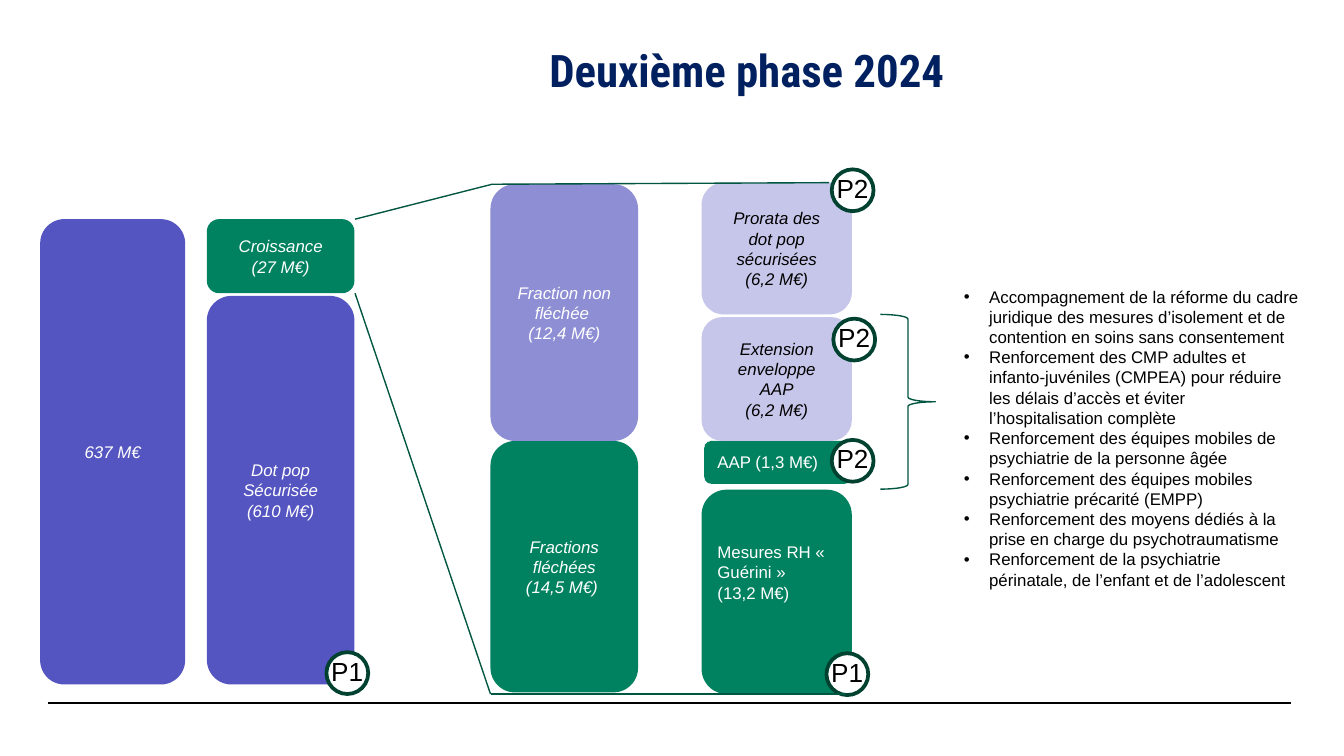
import pptx
import pptx.util
import pptx.dml.color
import pptx.enum.shapes
import pptx.enum.text
import pptx.oxml.ns
import lxml.etree

Cm, Pt = pptx.util.Cm, pptx.util.Pt
KIND = pptx.enum.shapes.MSO_SHAPE
ALIGN = pptx.enum.text.PP_ALIGN
ANCHOR = pptx.enum.text.MSO_ANCHOR
FIT = pptx.enum.text.MSO_AUTO_SIZE
qn = pptx.oxml.ns.qn
HEX = {"navy": "002060", "green": "008260", "dark": "004130", "line": "005640",
       "blue": "5555C1", "mid": "8E8ED5", "pale": "C6C6EA",
       "white": "FFFFFF", "black": "000000"}


def rgb(name):
    return pptx.dml.color.RGBColor.from_string(HEX[name])


def write(frame, lines, size, color, align=ALIGN.LEFT, italic=False, bold=False,
          face="Arial", bullet=False):
    """Put one paragraph per line into the frame."""
    frame.word_wrap = True
    for i, line in enumerate(lines):
        para = frame.paragraphs[0] if i == 0 else frame.add_paragraph()
        if bullet:
            props = para._p.get_or_add_pPr()
            props.set("marL", str(Cm(0.48)))
            props.set("indent", str(-Cm(0.48)))
            lxml.etree.SubElement(props, qn("a:buChar")).set("char", "•")
        para.alignment = align
        para.space_before = Pt(0)
        run = para.add_run()
        run.text = line
        font = run.font
        font.name, font.size, font.bold, font.italic = face, Pt(size), bold, italic
        font.color.rgb = rgb(color)


deck = pptx.Presentation()
deck.slide_width, deck.slide_height = Cm(25.4), Cm(14.28)
slide = deck.slides.add_slide(deck.slide_layouts[1])
shapes = slide.shapes

# Title and list
title, body = shapes.title, slide.placeholders[1]
for holder, place in ((title, (3.51, 0.46, 21.21, 2.21)),
                      (body, (17.96, 5.28, 6.93, 6.02))):
    holder.left, holder.top, holder.width, holder.height = map(Cm, place)
    holder.text_frame.auto_size = FIT.NONE
    holder.text_frame.vertical_anchor = ANCHOR.TOP

frame = title.text_frame
frame.margin_top = frame.margin_bottom = Cm(0.25)
write(frame, ["Deuxième phase 2024"], 24, "navy", ALIGN.CENTER, bold=True,
      face="Roboto Condensed")
frame.paragraphs[0].line_spacing = 1.1

write(body.text_frame, [
    "Accompagnement de la réforme du cadre juridique des mesures d’isolement "
    "et de contention en soins sans consentement",
    "Renforcement des CMP adultes et infanto-juvéniles (CMPEA) pour réduire "
    "les délais d’accès et éviter l’hospitalisation complète",
    "Renforcement des équipes mobiles de psychiatrie de la personne âgée",
    "Renforcement des équipes mobiles psychiatrie précarité (EMPP)",
    "Renforcement des moyens dédiés à la prise en charge du psychotraumatisme",
    "Renforcement de la psychiatrie périnatale, de l’enfant et de l’adolescent",
], 9, "black", bullet=True)

# Budget blocks: left, top, width, height, fill, text colour, lines
blocks = [
    (0.76, 4.14, 2.74, 8.79, "blue", "white", ["637 M€"]),
    (3.91, 5.59, 2.79, 7.34, "blue", "white", ["Dot pop", "Sécurisée", "(610 M€)"]),
    (3.91, 4.14, 2.79, 1.4, "green", "white", ["Croissance", "(27 M€)"]),
    (9.27, 8.33, 2.79, 4.75, "green", "white", ["Fractions fléchées", "(14,5 M€) "]),
    (9.27, 3.48, 2.79, 4.85, "mid", "white", ["Fraction non fléchée ", "(12,4 M€)"]),
    (13.31, 8.33, 2.79, 0.81, "green", "white", []),
    (13.26, 9.25, 2.84, 3.86, "green", "white", []),
    (13.26, 5.99, 2.84, 2.34, "pale", "black", ["Extension enveloppe AAP", "(6,2 M€)"]),
    (13.26, 3.45, 2.84, 2.49, "pale", "black",
     ["Prorata des dot pop sécurisées", "(6,2 M€)"]),
]
for *place, fill, color, lines in blocks:
    block = shapes.add_shape(KIND.ROUNDED_RECTANGLE, *map(Cm, place))
    block.shadow.inherit = False
    block.fill.solid()
    block.fill.fore_color.rgb = rgb(fill)
    block.line.fill.background()
    block.text_frame.vertical_anchor = ANCHOR.MIDDLE
    write(block.text_frame, lines, 9, color, ALIGN.CENTER, italic=True)

# Labels of the two lower right blocks
for top, wide, high, lines in (
        (8.41, 2.54, 0.64, ["AAP (1,3 M€)"]),
        (10.11, 2.59, 1.42, ["Mesures RH « Guérini »", "(13,2 M€)"])):
    label = shapes.add_textbox(Cm(13.31), Cm(top), Cm(wide), Cm(high))
    write(label.text_frame, lines, 9, "white")

# Phase badges
for left, top, phase in ((15.62, 12.34, "P1"), (15.72, 8.31, "P2"),
                         (15.75, 6.02, "P2"), (15.72, 3.2, "P2"),
                         (6.17, 12.32, "P1")):
    disc = shapes.add_shape(KIND.OVAL, Cm(left), Cm(top), Cm(0.79), Cm(0.79))
    disc.shadow.inherit = False
    disc.fill.solid()
    disc.fill.fore_color.rgb = rgb("white")
    disc.line.color.rgb = rgb("dark")
    disc.line.width = Pt(2)
    label = shapes.add_textbox(Cm(left - 0.16), Cm(top - 0.07), Cm(1.19), Cm(0.86))
    write(label.text_frame, [phase], 14, "black")

# Brace from the blocks to the list
brace = shapes.add_shape(KIND.RIGHT_BRACE, Cm(16.64), Cm(5.94), Cm(1.04), Cm(3.3))
brace.shadow.inherit = False
brace.fill.background()
brace.line.color.rgb = rgb("line")
brace.line.width = Pt(0.75)

# Zoom lines and footer rule
for *ends, color, width in (
        (6.71, 5.54, 9.27, 13.11, "line", 0.75),
        (6.71, 4.14, 9.3, 3.48, "line", 0.75),
        (9.27, 13.11, 15.98, 13.11, "line", 0.75),
        (9.3, 3.48, 15.67, 3.45, "line", 0.75),
        (0.9, 13.28, 24.4, 13.28, "black", 0.8)):
    rule = shapes.add_connector(pptx.enum.shapes.MSO_CONNECTOR.STRAIGHT, *map(Cm, ends))
    rule.line.color.rgb = rgb(color)
    rule.line.width = Pt(width)
    lxml.etree.SubElement(rule._element.spPr, qn("a:effectLst"))

deck.save("out.pptx")
